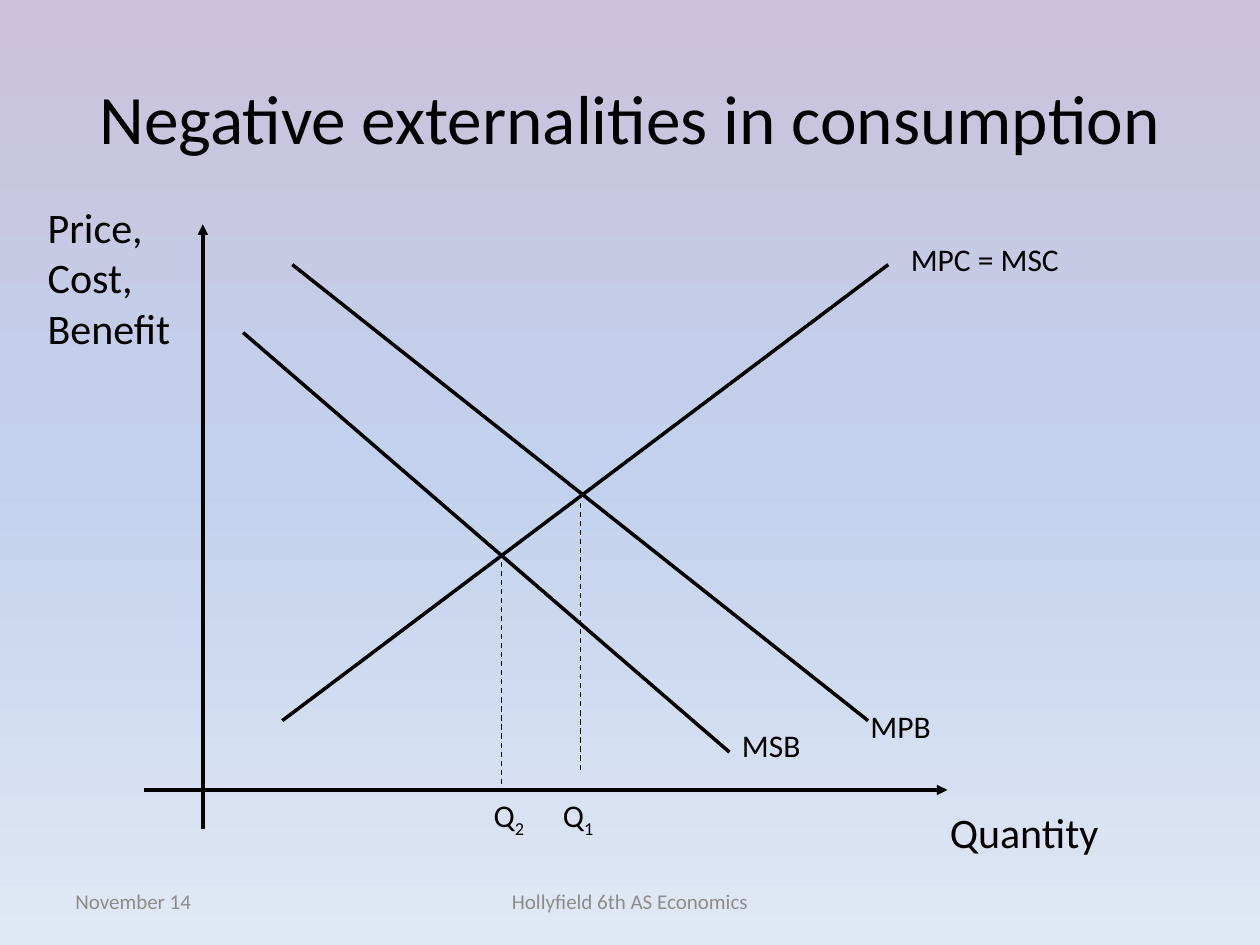
from copy import deepcopy

from pptx import Presentation
from pptx.dml.color import RGBColor
from pptx.enum import dml, shapes, text
from pptx.oxml.ns import qn
from pptx.util import Inches, Pt

FONT = "Calibri"
HUES = {"ink": "000000", "mute": "8C8C8C",
        "top": "CCC1DA", "mid": "C2D1ED", "low": "E1E8F5"}
CELL = 0.1  # grid step in inches: the slide is 100 columns by 75 rows
COLS, ROWS = 100, 75
LEFT, MID = text.PP_ALIGN.LEFT, text.PP_ALIGN.CENTER


def hue(name):
    return RGBColor.from_string(HUES[name])


def grid(n):
    return Inches(n * CELL)


def sky(slide):
    """Three-stop background, from top to bottom."""
    fill = slide.background.fill
    fill.gradient()
    fill.gradient_angle = 270
    stops = slide.element.xpath(".//a:gsLst")[0]
    stops.append(deepcopy(stops[-1]))
    for stop, name, pos in zip(fill.gradient_stops, ("top", "mid", "low"), (0, 0.5, 1)):
        stop.color.rgb = hue(name)
        stop.position = pos


def write(slide, box, words, size, tone="ink", align=LEFT, wrap=True, mid=False, sub=""):
    """Text in a box of columns and rows, with an optional subscript."""
    frame = slide.shapes.add_textbox(*map(grid, box)).text_frame
    frame.word_wrap = wrap
    if mid:
        frame.vertical_anchor = text.MSO_ANCHOR.MIDDLE
    para = frame.paragraphs[0]
    para.alignment = align
    for part in filter(None, (words, sub)):
        run = para.add_run()
        run.text = part
        run.font.name, run.font.size = FONT, Pt(size)
        run.font.color.rgb = hue(tone)
    if sub:
        run.font._element.set("baseline", "-25000")


def draw(slide, start, end, width=2, dash=False, tip=False):
    """Straight line, dashed or with an arrowhead at its end."""
    line = slide.shapes.add_connector(
        shapes.MSO_CONNECTOR.STRAIGHT, *map(grid, start + end))
    line.line.color.rgb = hue("ink")
    line.line.width = Pt(width)
    if dash:
        line.line.dash_style = dml.MSO_LINE.DASH
    props = line._element.spPr
    if tip:
        head = props.find(qn("a:ln")).makeelement(qn("a:tailEnd"), {"type": "triangle"})
        props.find(qn("a:ln")).append(head)
    props.append(props.makeelement(qn("a:effectLst"), {}))


def title(slide, box):
    write(slide, box, "Negative externalities in consumption", 39.6, align=MID, mid=True)


def footer(slide, box):
    x, y, w, h = box
    date, wide = 23.3, 31.7
    write(slide, (x, y, date, h), "November 14", 12, "mute", mid=True)
    write(slide, (x + (w - wide) / 2, y, wide, h),
          "Hollyfield 6th AS Economics", 12, "mute", MID, mid=True)


def market(slide, box):
    """Cost and benefit curves, placed from the top left of the box."""
    x, y, w, h = box
    base, side = 44.9, 4.7

    def at(col, row):
        return x + col, y + row

    # Axes and their names
    draw(slide, at(side, h), at(side, 0), tip=True)
    draw(slide, at(0, base), at(w, base), tip=True)
    write(slide, at(-8.6, -2.3) + (11.8, 13.1), "Price, Cost, Benefit", 24)
    write(slide, at(63, 45.7) + (15, 5), "Quantity", 24)

    # Curves: start, end, name, place and width of name
    for start, end, name, spot, wide in (
            ((11, 39.4), (59.1, 3.2), "MPC = MSC", (59.9, 0.8), 13.9),
            ((11.8, 3.2), (57.5, 39.4), "MPB", (56.7, 37.8), 6.8),
            ((7.9, 8.6), (46.5, 41.9), "MSB", (46.5, 39.3), 6.7)):
        draw(slide, at(*start), at(*end))
        write(slide, at(*spot) + (wide, 4), name, 18, wrap=False)

    # Quantities: column, top and foot of the drop line, column of the name
    for sub, col, top, foot, spot in (("1", 34.7, 22.1, 43.3, 32.3),
                                      ("2", 28.4, 26.8, 45, 26.8)):
        draw(slide, at(col, top), at(col, foot), 0.75, dash=True)
        write(slide, at(spot, base) + (4.6, 4), "Q", 18, wrap=False, sub=sub)


def main():
    deck = Presentation()
    deck.slide_width, deck.slide_height = grid(COLS), grid(ROWS)
    slide = deck.slides.add_slide(deck.slide_layouts[6])
    sky(slide)
    title(slide, (5, 3, 90, 12.5))
    footer(slide, (5, 69.5, 90, 4))
    market(slide, (11.4, 17.8, 63.8, 48))
    deck.save("out.pptx")


if __name__ == "__main__":
    main()
